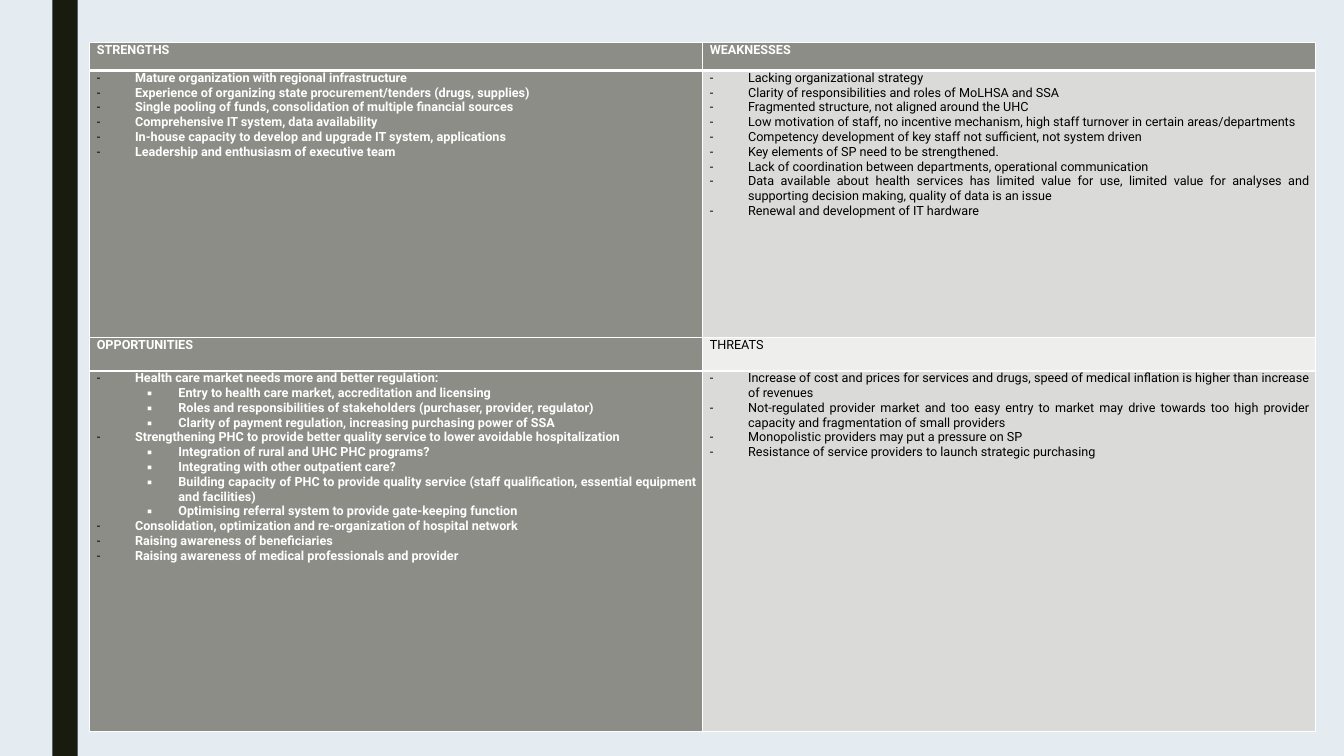
from lxml import etree
from pptx import Presentation
from pptx.dml.color import RGBColor
from pptx.enum.shapes import MSO_SHAPE
from pptx.enum.text import PP_ALIGN
from pptx.oxml.ns import qn
from pptx.util import Pt

PX = 9144  # 100 px to the inch
RECT = MSO_SHAPE.RECTANGLE
JUST = PP_ALIGN.JUSTIFY

SKY = RGBColor(0xE4, 0xEC, 0xF1)
DARK = RGBColor(0x19, 0x1B, 0x0E)
GRAY = RGBColor(0x8C, 0x8D, 0x86)
LIGHT = RGBColor(0xDA, 0xDB, 0xD9)
PALE = RGBColor(0xEE, 0xEE, 0xED)
WHITE = RGBColor(0xFF, 0xFF, 0xFF)
BLACK = RGBColor(0x00, 0x00, 0x00)

# Bullet, left margin and indent by level
MARKS = [("-", 38, -38), ("▪", 81, -31)]
ROWS = [28, 265, 33, 358]

STRONG = [
    (0, "Mature organization with regional infrastructure"),
    (0, "Experience of organizing state procurement/tenders (drugs, supplies)"),
    (0, "Single pooling of funds, consolidation of multiple financial sources"),
    (0, "Comprehensive IT system, data availability"),
    (0, "In-house capacity to develop and upgrade IT system, applications"),
    (0, "Leadership and enthusiasm of executive team"),
]
WEAK = [
    (0, "Lacking organizational strategy"),
    (0, "Clarity of responsibilities and roles of MoLHSA and SSA"),
    (0, "Fragmented structure, not aligned around the UHC"),
    (0, "Low motivation of staff, no incentive mechanism, high staff turnover "
        "in certain areas/departments"),
    (0, "Competency development of key staff not sufficient, not system driven"),
    (0, "Key elements of SP need to be strengthened."),
    (0, "Lack of coordination between departments, operational communication"),
    (0, "Data available about health services has limited value for use, limited "
        "value for analyses and supporting decision making, quality of data is an issue"),
    (0, "Renewal and development of IT hardware"),
]
CHANCE = [
    (0, "Health care market needs more and better regulation:"),
    (1, "Entry to health care market, accreditation and licensing"),
    (1, "Roles and responsibilities of stakeholders (purchaser, provider, regulator)"),
    (1, "Clarity of payment regulation, increasing purchasing power of SSA"),
    (0, "Strengthening PHC to provide better quality service to lower "
        "avoidable hospitalization"),
    (1, "Integration of rural and UHC PHC programs?"),
    (1, "Integrating with other outpatient care?"),
    (1, "Building capacity of PHC to provide quality service (staff qualification, "
        "essential equipment and facilities)"),
    (1, "Optimising referral system to provide gate-keeping function"),
    (0, "Consolidation, optimization and re-organization of hospital network"),
    (0, "Raising awareness of beneficiaries"),
    (0, "Raising awareness of medical professionals and provider"),
]
THREAT = [
    (0, "Increase of cost and prices for services and drugs, speed of medical "
        "inflation is higher than increase of revenues"),
    (0, "Not-regulated provider market and too easy entry to market may drive "
        "towards too high provider capacity and fragmentation of small providers"),
    (0, "Monopolistic providers may put a pressure on SP"),
    (0, "Resistance of service providers to launch strategic purchasing"),
]
# A level of None is a heading without bullet
GRID = [
    [([(None, "STRENGTHS")], GRAY), ([(None, "WEAKNESSES")], GRAY)],
    [(STRONG, GRAY), (WEAK, LIGHT)],
    [([(None, "OPPORTUNITIES")], GRAY), ([(None, "THREATS")], PALE)],
    [(CHANCE, GRAY), (THREAT, LIGHT)],
]


def sub(node, tag, **attrs):
    return etree.SubElement(node, qn(tag), attrs)


def add_mark(para, level):
    char, left, indent = MARKS[level]
    props = para._p.get_or_add_pPr()
    props.set("marL", str(left * PX))
    props.set("indent", str(indent * PX))
    if level == 0:
        sub(sub(props, "a:buClr"), "a:srgbClr", val=str(BLACK))
    sub(props, "a:buFont", typeface="Roboto")
    sub(props, "a:buChar", char=char)


def add_edges(cell, top, bottom):
    props = cell._tc.get_or_add_tcPr()
    for side, width in zip("LRTB", (1, 1, top, bottom)):
        line = sub(props, f"a:ln{side}", w=str(Pt(width)))
        sub(sub(line, "a:solidFill"), "a:srgbClr", val=str(WHITE))


def fill_cell(cell, items, color):
    cell.margin_left = cell.margin_right = 7 * PX
    cell.margin_top = cell.margin_bottom = 0
    cell.fill.solid()
    cell.fill.fore_color.rgb = color
    frame = cell.text_frame
    frame.text = "\n".join(text for _, text in items)
    for para, (level, _) in zip(frame.paragraphs, items):
        para.alignment = JUST
        if level is not None:
            para.level = level
            add_mark(para, level)
        font = para.font
        font.name, font.size = "Roboto", Pt(9)
        font.bold = color == GRAY
        font.color.rgb = WHITE if color == GRAY else BLACK


def add_swot(slide, left, top, width):
    frame = slide.shapes.add_table(
        len(ROWS), 2, left * PX, top * PX, width * PX, sum(ROWS) * PX)
    table = frame.table
    table.first_row = table.horz_banding = False
    for col in table.columns:
        col.width = width // 2 * PX
    for r, (height, line) in enumerate(zip(ROWS, GRID)):
        table.rows[r].height = height * PX
        for c, (items, color) in enumerate(line):
            cell = table.cell(r, c)
            add_edges(cell, 3 if r == 1 else 1, 3 if r == 0 else 1)
            fill_cell(cell, items, color)


def add_band(slide, left, top, width, height):
    band = slide.shapes.add_shape(RECT, left * PX, top * PX, width * PX, height * PX)
    band.shadow.inherit = False
    band.fill.solid()
    band.fill.fore_color.rgb = DARK
    band.line.fill.background()


def main():
    deck = Presentation()
    deck.slide_width, deck.slide_height = 1333 * PX, 750 * PX
    slide = deck.slides.add_slide(deck.slide_layouts[6])
    slide.background.fill.solid()
    slide.background.fill.fore_color.rgb = SKY
    add_band(slide, 52, 0, 25, 750)
    add_swot(slide, 89, 42, 1216)
    deck.save("out.pptx")


if __name__ == "__main__":
    main()
